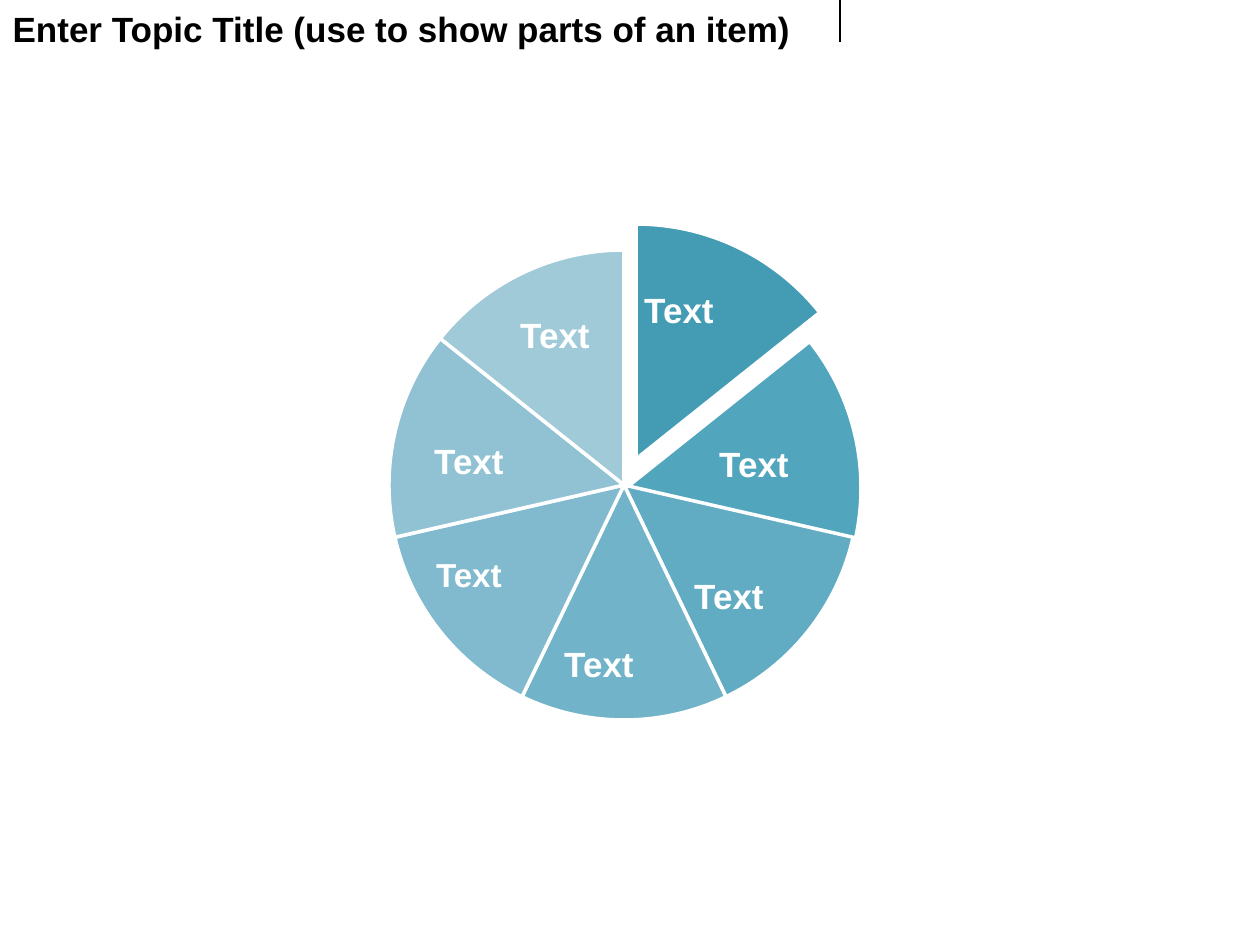
from dataclasses import dataclass

from lxml import etree
from pptx import Presentation
from pptx.dml.color import RGBColor
from pptx.enum.shapes import MSO_CONNECTOR, MSO_SHAPE
from pptx.enum.text import MSO_ANCHOR, MSO_AUTO_SIZE, PP_ALIGN
from pptx.oxml.ns import qn
from pptx.util import Emu, Pt

PIE = MSO_SHAPE.PIE
STRAIGHT = MSO_CONNECTOR.STRAIGHT
TOP, MIDDLE = MSO_ANCHOR.TOP, MSO_ANCHOR.MIDDLE
LEFT, CENTER = PP_ALIGN.LEFT, PP_ALIGN.CENTER

PX_PER_INCH = 126
FONT = "Arial"
BLACK = RGBColor(0x00, 0x00, 0x00)
WHITE = RGBColor(0xFF, 0xFF, 0xFF)

PIE_SIZE = 470
LABEL_W, LABEL_H = 126, 80
FIRST_ANGLE = 270
ADJ_PER_DEGREE = 0.6  # 60000 angle units a degree, 100000 units an adjustment


@dataclass(frozen=True)
class Slice:
    color: RGBColor
    label_x: int
    label_y: int
    left: int = 389
    top: int = 250
    label_size: int = 20


SLICES = [
    Slice(RGBColor(0x44, 0x9C, 0xB4), 679, 309, left=401, top=224),
    Slice(RGBColor(0x51, 0xA5, 0xBC), 754, 463, left=391, top=253),
    Slice(RGBColor(0x61, 0xAC, 0xC2), 729, 595),
    Slice(RGBColor(0x71, 0xB3, 0xC8), 599, 663),
    Slice(RGBColor(0x81, 0xBA, 0xCE), 469, 574, label_size=19),
    Slice(RGBColor(0x91, 0xC2, 0xD3), 469, 460),
    Slice(RGBColor(0xA1, 0xCA, 0xD9), 555, 334),
]


def px(n: float) -> Emu:
    return Emu(round(n * 914400 / PX_PER_INCH))


def set_text(s, text: str, *, size: int = 20, color: RGBColor = WHITE,
             align=CENTER, anchor=MIDDLE) -> None:
    tf = s.text_frame
    tf.word_wrap = True
    tf.vertical_anchor = anchor
    p = tf.paragraphs[0]
    p.alignment = align
    r = p.add_run()
    r.text = text
    r.font.name = FONT
    r.font.size = Pt(size)
    r.font.bold = True
    r.font.color.rgb = color


def add_title(sp, text: str) -> None:
    s = sp.title
    s.left, s.top, s.width, s.height = px(0), px(1), px(819), px(55)
    set_text(s, text, color=BLACK, align=LEFT, anchor=TOP)
    s.text_frame.auto_size = MSO_AUTO_SIZE.SHAPE_TO_FIT_TEXT


def add_divider(sp, x: int, bottom: int) -> None:
    s = sp.add_connector(STRAIGHT, px(x), px(0), px(x), px(bottom))
    s.line.color.rgb = BLACK
    s.line.width = Pt(0.75)
    etree.SubElement(s._element.spPr, qn("a:effectLst"))


def add_slice(sp, item: Slice, start: float, end: float) -> None:
    s = sp.add_shape(PIE, px(item.left), px(item.top), px(PIE_SIZE), px(PIE_SIZE))
    s.adjustments[0] = start % 360 * ADJ_PER_DEGREE
    s.adjustments[1] = end % 360 * ADJ_PER_DEGREE
    s.shadow.inherit = False
    s.fill.solid()
    s.fill.fore_color.rgb = item.color
    s.line.color.rgb = WHITE
    s.line.width = Pt(2)


def add_label(sp, item: Slice, text: str) -> None:
    s = sp.add_textbox(px(item.label_x - LABEL_W / 2), px(item.label_y - LABEL_H / 2),
                       px(LABEL_W), px(LABEL_H))
    set_text(s, text, size=item.label_size)


def main() -> None:
    prs = Presentation()
    prs.slide_width, prs.slide_height = px(1260), px(945)
    sp = prs.slides.add_slide(prs.slide_layouts[5]).shapes

    add_divider(sp, 840, 42)
    sweep = 360 / len(SLICES)
    for i, item in enumerate(SLICES):
        start = FIRST_ANGLE + i * sweep
        add_slice(sp, item, start, start + sweep)
        add_label(sp, item, "Text")
    add_title(sp, "Enter Topic Title (use to show parts of an item)")

    prs.save("out.pptx")


if __name__ == "__main__":
    main()
